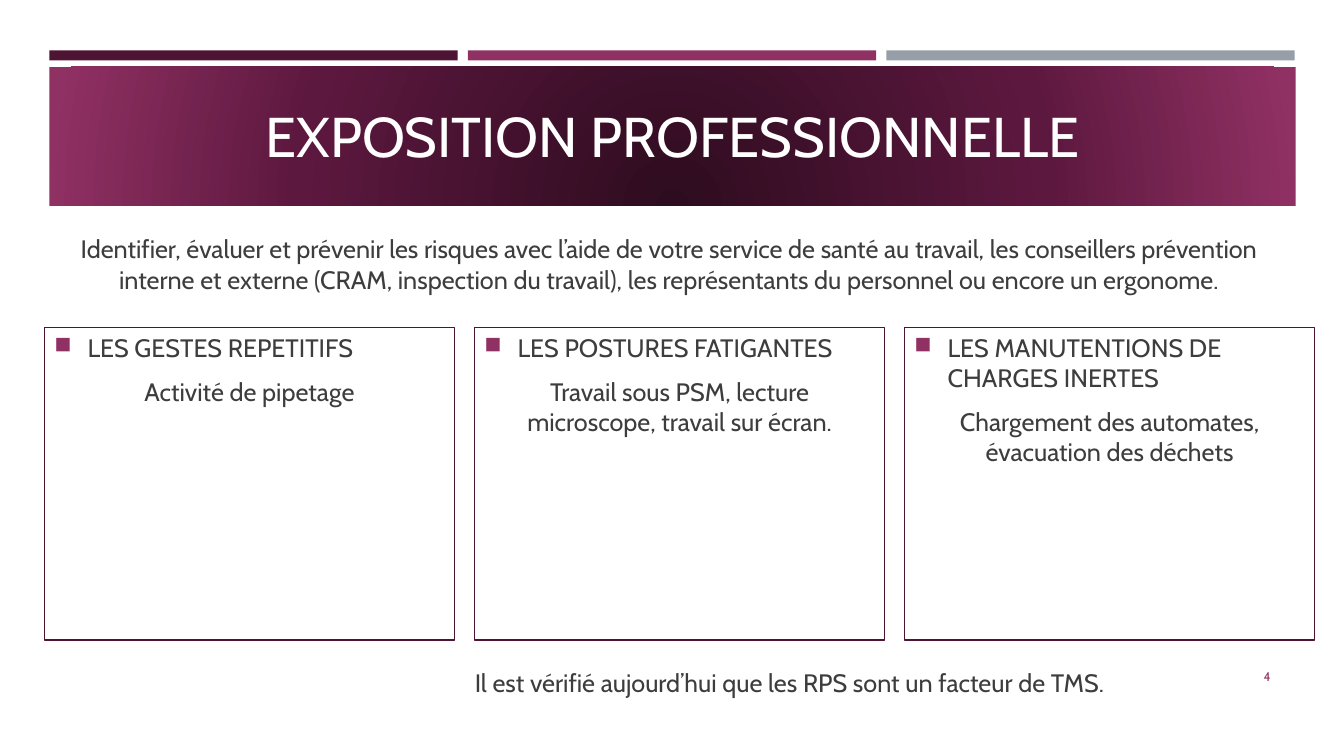
from lxml import etree
from pptx import Presentation, util as u
from pptx.dml.color import RGBColor
from pptx.enum import shapes, text
from pptx.oxml import parse_xml
from pptx.oxml.ns import qn

FONT = "Cabin"
DARK, PLUM, GRAY, INK, WHITE = "4D1434", "903163", "969FA7", "3D3D3D", "FFFFFF"
TITLE = "EXPOSITION PROFESSIONNELLE"
INTRO = (
    "Identifier, évaluer et prévenir les risques avec l’aide de votre service de santé "
    "au travail, les conseillers prévention interne et externe (CRAM, inspection du "
    "travail), les représentants du personnel ou encore un ergonome."
)
CARDS = [
    ("LES GESTES REPETITIFS", "Activité de pipetage"),
    ("LES POSTURES FATIGANTES", "Travail sous PSM, lecture microscope, travail sur écran."),
    ("LES MANUTENTIONS DE CHARGES INERTES", "Chargement des automates, évacuation des déchets"),
]
CLOSE = "Il est vérifié aujourd’hui que les RPS sont un facteur de TMS."
PAGE = "4"
STOPS = [(0, "2E0C1F"), (60, "5D183F"), (100, PLUM)]

LEFT, MID, RIGHT = text.PP_ALIGN.LEFT, text.PP_ALIGN.CENTER, text.PP_ALIGN.RIGHT
TOP, CORE = text.MSO_ANCHOR.TOP, text.MSO_ANCHOR.MIDDLE

deck = Presentation()
deck.slide_width, deck.slide_height = u.Inches(13.33), u.Inches(7.5)
slide = deck.slides.add_slide(deck.slide_layouts[6])


def paint(part, tone):
    part.rgb = RGBColor.from_string(tone)


def rect(x, y, w, h, fill=None, line=None):
    box = slide.shapes.add_shape(
        shapes.MSO_SHAPE.RECTANGLE, *(u.Inches(v) for v in (x, y, w, h)))
    box.shadow.inherit = False
    if fill:
        box.fill.solid()
        paint(box.fill.fore_color, fill)
    else:
        box.fill.background()
    if line:
        paint(box.line.color, line)
        box.line.width = u.Pt(0.75)
    else:
        box.line.fill.background()
    return box


def glow(box):
    stops = "".join(
        f'<a:gs pos="{pos * 1000}"><a:srgbClr val="{tone}"/></a:gs>' for pos, tone in STOPS)
    grad = parse_xml(
        '<a:gradFill xmlns:a="http://schemas.openxmlformats.org/drawingml/2006/main" '
        f'rotWithShape="1"><a:gsLst>{stops}</a:gsLst><a:path path="circle">'
        '<a:fillToRect l="50000" t="130000" r="50000" b="-30000"/></a:path></a:gradFill>')
    props = box._element.spPr
    props.replace(props.find(qn("a:solidFill")), grad)


def bullet(para):
    props = para._p.get_or_add_pPr()
    props.set("marL", str(u.Inches(0.33)))
    props.set("indent", str(-u.Inches(0.33)))
    tint = etree.SubElement(props, qn("a:buClr"))
    etree.SubElement(tint, qn("a:srgbClr")).set("val", PLUM)
    etree.SubElement(props, qn("a:buSzPct")).set("val", "92000")
    etree.SubElement(props, qn("a:buChar")).set("char", "■")


def write(box, lines, size=18, tone=INK, anchor=TOP):
    frame = box.text_frame
    frame.word_wrap = True
    frame.vertical_anchor = anchor
    for i, (words, align, mark) in enumerate(lines):
        para = frame.add_paragraph() if i else frame.paragraphs[0]
        if mark:
            bullet(para)
        para.alignment = align
        para.space_before = u.Pt(3.6 if i else 0)
        para.space_after = u.Pt(6 if len(lines) > 1 else 0)
        run = para.add_run()
        run.text = words
        run.font.name = FONT
        run.font.size = u.Pt(size)
        paint(run.font.color, tone)


def label(x, y, w, h, words, align=MID, **style):
    box = slide.shapes.add_textbox(*(u.Inches(v) for v in (x, y, w, h)))
    write(box, [(words, align, False)], **style)


for i, tone in enumerate((DARK, PLUM, GRAY)):
    rect(0.49 + 4.15 * i, 0.5, 4.05, 0.1, tone)
glow(rect(0.49, 0.66, 12.36, 1.38, DARK))
label(0.64, 0.8, 12.06, 1.08, TITLE, size=40, tone=WHITE, anchor=CORE)

label(0.44, 2.27, 12.39, 0.45, INTRO)

wide = 4.07
step = (13.04 - 0.44 - wide) / 2
for i, (head, body) in enumerate(CARDS):
    card = rect(0.44 + step * i, 3.25, wide, 3.1, line=DARK)
    write(card, [(head, LEFT, True), (body, MID, False)])

label(2.62, 6.57, 10.42, 0.45, CLOSE)
label(11.55, 6.51, 1.15, 0.4, PAGE, RIGHT, size=9, tone=PLUM, anchor=CORE)

deck.save("out.pptx")
